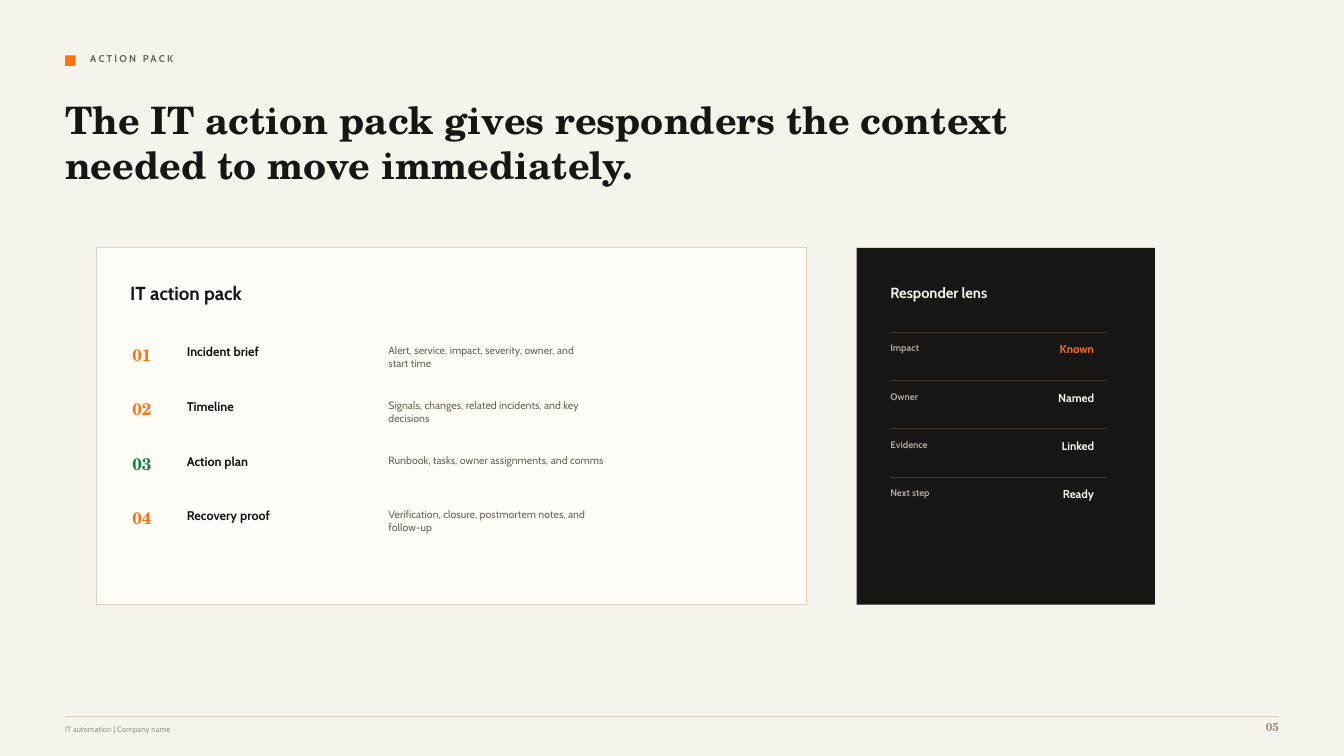
import pptx
import pptx.util
import pptx.dml.color
import pptx.enum.shapes
import pptx.enum.text
import pptx.oxml

# The slide is a grid of 640 columns by 360 rows
COLUMNS = 640
SLIDE_WIDTH = pptx.util.Inches(13.333)
SLIDE_HEIGHT = pptx.util.Inches(7.5)
UNIT = SLIDE_WIDTH / COLUMNS

SANS, SERIF = "Cabin", "TeX Gyre Schola"
PAPER, CARD, INK = "F7F4EE", "FFFDF8", "171614"
ORANGE, GREEN = "F97316", "15803D"
GREY, FAINT, SAND = "69635A", "9A9184", "D9D0C3"
LENS_RULE, LENS_LABEL = "3C362E", "AFA79B"

STEPS = [
    ("01", ORANGE, "Incident brief",
     "Alert, service, impact, severity, owner, and\nstart time"),
    ("02", ORANGE, "Timeline",
     "Signals, changes, related incidents, and key\ndecisions"),
    ("03", GREEN, "Action plan", "Runbook, tasks, owner assignments, and comms"),
    ("04", ORANGE, "Recovery proof",
     "Verification, closure, postmortem notes, and\nfollow-up"),
]
LENS = [
    ("Impact", "Known", ORANGE),
    ("Owner", "Named", PAPER),
    ("Evidence", "Linked", PAPER),
    ("Next step", "Ready", PAPER),
]


def grid(*lengths):
    return [round(length * UNIT) for length in lengths]


def colour(value):
    return pptx.dml.color.RGBColor.from_string(value)


def add_block(page, box, fill, line=None):
    block = page.shapes.add_shape(
        pptx.enum.shapes.MSO_SHAPE.RECTANGLE, *grid(*box))
    block.shadow.inherit = False
    block.fill.solid()
    block.fill.fore_color.rgb = colour(fill)
    if line:
        block.line.color.rgb = colour(line)
        block.line.width = pptx.util.Pt(0.75)
    else:
        block.line.fill.background()


def add_rule(page, left, top, width, shade):
    rule = page.shapes.add_connector(
        pptx.enum.shapes.MSO_CONNECTOR.STRAIGHT,
        *grid(left, top, left + width, top))
    rule.line.color.rgb = colour(shade)
    rule.line.width = pptx.util.Pt(0.75)
    rule._element.spPr.append(pptx.oxml.parse_xml(
        '<a:effectLst xmlns:a='
        '"http://schemas.openxmlformats.org/drawingml/2006/main"/>'))


def add_text(page, box, text, size, shade, font=SANS, bold=True, right=False):
    frame = page.shapes.add_textbox(*grid(*box)).text_frame
    frame.word_wrap = True
    frame.margin_left = frame.margin_right = 0
    frame.margin_top = frame.margin_bottom = 0
    frame.text = text
    for para in frame.paragraphs:
        para.font.name = font
        para.font.size = pptx.util.Pt(size)
        para.font.bold = bold
        para.font.color.rgb = colour(shade)
        if right:
            para.alignment = pptx.enum.text.PP_ALIGN.RIGHT
    return frame


def add_header(page, left, top, width):
    add_block(page, (left, top + 1.4, 5, 5), ORANGE)
    eyebrow = add_text(page, (left + 12, top, 310, 9), "ACTION PACK", 7.1, GREY)
    # Letter spacing in hundredths of a point
    eyebrow.paragraphs[0].runs[0].font._element.set("spc", "160")
    add_text(page, (left, top + 21, width, 49),
             "The IT action pack gives responders the context "
             "needed to move immediately.", 27, INK, SERIF)


def add_action_pack(page, left, top, width, height):
    add_block(page, (left, top, width, height), CARD, SAND)
    add_text(page, (left + 16, top + 16, 150, 12), "IT action pack", 13.5, INK)
    for row, (number, shade, name, detail) in enumerate(STEPS):
        y = top + 46 + 26 * row
        add_text(page, (left + 17, y, 17, 12), number, 12, shade, SERIF)
        add_text(page, (left + 43, y, 87, 9), name, 9, INK)
        add_text(page, (left + 139, y, 160, 15), detail, 7.5, GREY, bold=False)


def add_responder_lens(page, left, top, width, height):
    add_block(page, (left, top, width, height), INK)
    add_text(page, (left + 16, top + 17, 80, 10), "Responder lens", 10.5, PAPER)
    for row, (label, value, shade) in enumerate(LENS):
        y = top + 40 + 23 * row
        add_rule(page, left + 16, y + 0.2, 103, LENS_RULE)
        add_text(page, (left + 16, y + 5, 46, 8), label, 6.8, LENS_LABEL)
        add_text(page, (left + 72, y + 5, 41, 8), value, 8.2, shade, right=True)


def add_footer(page, left, top, width):
    add_rule(page, left, top, width, SAND)
    add_text(page, (left, top + 4, 380, 7), "IT automation | Company name",
             5.6, FAINT, bold=False)
    add_text(page, (left + width - 24, top + 2, 24, 9), "05", 8.2, FAINT,
             SERIF, right=True)


def main():
    deck = pptx.Presentation()
    deck.slide_width, deck.slide_height = SLIDE_WIDTH, SLIDE_HEIGHT
    page = deck.slides.add_slide(deck.slide_layouts[6])
    page.background.fill.solid()
    page.background.fill.fore_color.rgb = colour(PAPER)

    add_header(page, 31, 25, 450)
    add_action_pack(page, 46, 118, 338, 170)
    add_responder_lens(page, 408, 118, 142, 170)
    add_footer(page, 31, 341, 578)
    deck.save("out.pptx")


if __name__ == "__main__":
    main()
